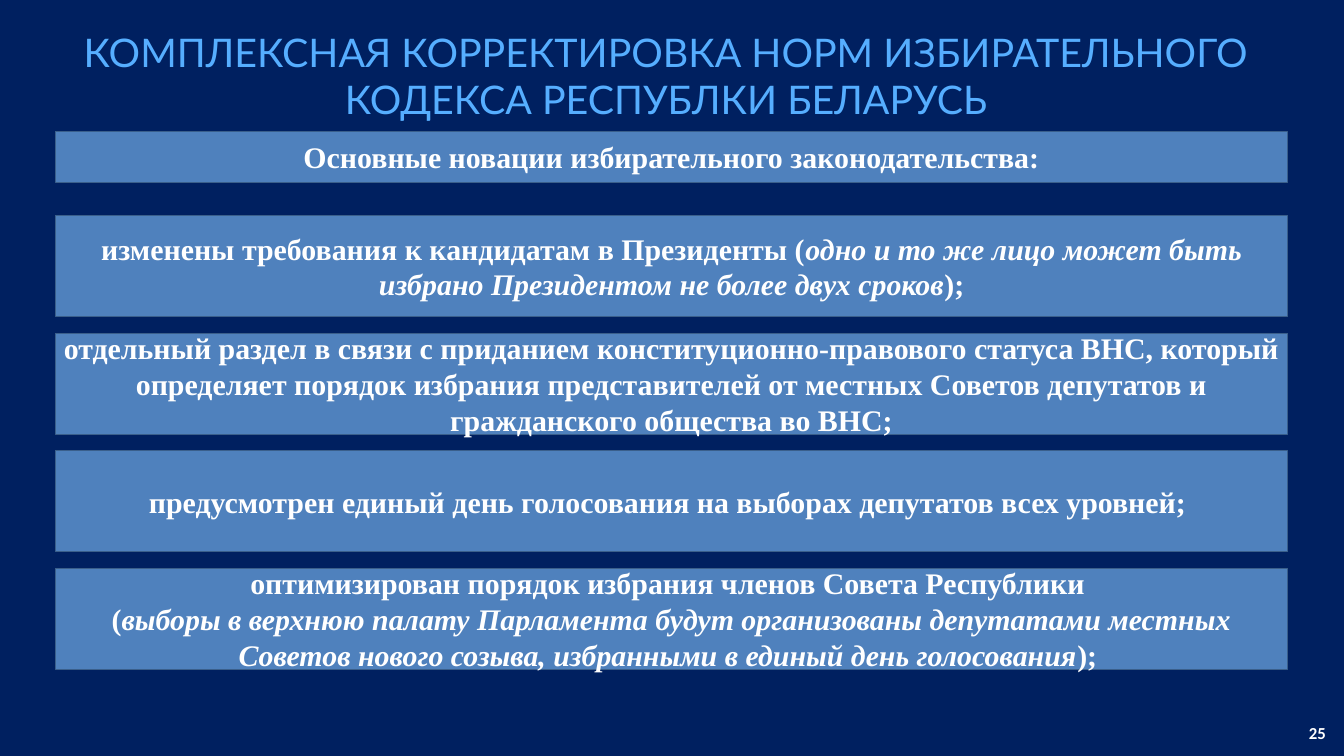
import pptx
import pptx.dml.color
import pptx.enum.shapes
import pptx.enum.text
import pptx.util
from pptx.util import Inches

COLORS = {
    "background": "002060",
    "title": "56AEFF",
    "panel": "4F81BD",
    "border": "3A5F8B",
    "text": "FFFFFF",
}
TITLE_FONT = {"name": "Lato", "size": pptx.util.Pt(42.2)}
PANEL_FONT = {"name": "Times New Roman", "size": pptx.util.Pt(32), "bold": True}
NUMBER_FONT = {"name": "Calibri", "size": pptx.util.Pt(18), "bold": True}

ALIGN = pptx.enum.text.PP_ALIGN
ANCHOR = pptx.enum.text.MSO_ANCHOR
MARGINS = ("margin_left", "margin_top", "margin_right", "margin_bottom")

PANEL_LEFT, PANEL_WIDTH = 0.83, 18.33
HEADING = [("Основные новации избирательного законодательства:", False)]
# Each panel is a list of (text, italic) parts.
INNOVATIONS = [
    [
        ("изменены требования к кандидатам в Президенты (", False),
        ("одно и то же лицо может быть избрано Президентом не более двух сроков", True),
        (");", False),
    ],
    [
        ("отдельный раздел в связи с приданием конституционно-правового статуса ВНС, "
         "который определяет порядок избрания представителей от местных Советов "
         "депутатов и гражданского общества во ВНС;", False),
    ],
    [("предусмотрен единый день голосования на выборах депутатов всех уровней; ", False)],
    [
        ("оптимизирован порядок избрания членов Совета Республики \n(", False),
        ("выборы в верхнюю палату Парламента будут организованы депутатами местных "
         "Советов нового созыва, избранными в единый день голосования", True),
        ("); ", False),
    ],
]


def rgb(name):
    return pptx.dml.color.RGBColor.from_string(COLORS[name])


def set_attributes(target, values):
    for name, value in values.items():
        setattr(target, name, value)


def write_parts(paragraph, parts, font, color):
    """Add (text, italic) parts as runs; a newline becomes a line break."""
    for text, italic in parts:
        for index, line in enumerate(text.split("\n")):
            if index:
                paragraph.add_line_break()
            run = paragraph.add_run()
            run.text = line
            set_attributes(run.font, font)
            if italic:
                run.font.italic = True
            run.font.color.rgb = rgb(color)


def add_text(slide, box, text, font, color, frame_format, paragraph_format):
    shape = slide.shapes.add_textbox(*map(Inches, box))
    shape.text_frame.word_wrap = True
    set_attributes(shape.text_frame, frame_format)
    paragraph = shape.text_frame.paragraphs[0]
    set_attributes(paragraph, paragraph_format)
    write_parts(paragraph, [(text, False)], font, color)


def add_panel(slide, top, height, parts):
    shape = slide.shapes.add_shape(
        pptx.enum.shapes.MSO_SHAPE.RECTANGLE,
        *map(Inches, (PANEL_LEFT, top, PANEL_WIDTH, height)),
    )
    shape.shadow.inherit = False
    shape.fill.solid()
    shape.fill.fore_color.rgb = rgb("panel")
    shape.line.color.rgb = rgb("border")
    shape.line.width = pptx.util.Pt(1)
    set_attributes(shape.text_frame, {"word_wrap": True, "vertical_anchor": ANCHOR.MIDDLE})
    paragraph = shape.text_frame.paragraphs[0]
    paragraph.alignment = ALIGN.CENTER
    write_parts(paragraph, parts, PANEL_FONT, "text")


def main():
    presentation = pptx.Presentation()
    set_attributes(presentation, {"slide_width": Inches(20), "slide_height": Inches(11.25)})
    slide = presentation.slides.add_slide(presentation.slide_layouts[6])
    slide.background.fill.solid()
    slide.background.fill.fore_color.rgb = rgb("background")

    add_text(
        slide, (0, 0.42, 19.83, 1.41),
        "КОМПЛЕКСНАЯ КОРРЕКТИРОВКА НОРМ ИЗБИРАТЕЛЬНОГО КОДЕКСА РЕСПУБЛКИ БЕЛАРУСЬ",
        TITLE_FONT, "title", dict.fromkeys(MARGINS, 0),
        {"alignment": ALIGN.CENTER, "line_spacing": pptx.util.Pt(50.6)},
    )
    add_panel(slide, 1.96, 0.75, HEADING)
    for index, parts in enumerate(INNOVATIONS):
        add_panel(slide, 3.21 + 1.75 * index, 1.5, parts)
    add_text(
        slide, (17.5, 10.71, 2.33, 0.4), "25", NUMBER_FONT, "text",
        {"vertical_anchor": ANCHOR.MIDDLE}, {"alignment": ALIGN.RIGHT},
    )
    presentation.save("out.pptx")


if __name__ == "__main__":
    main()
